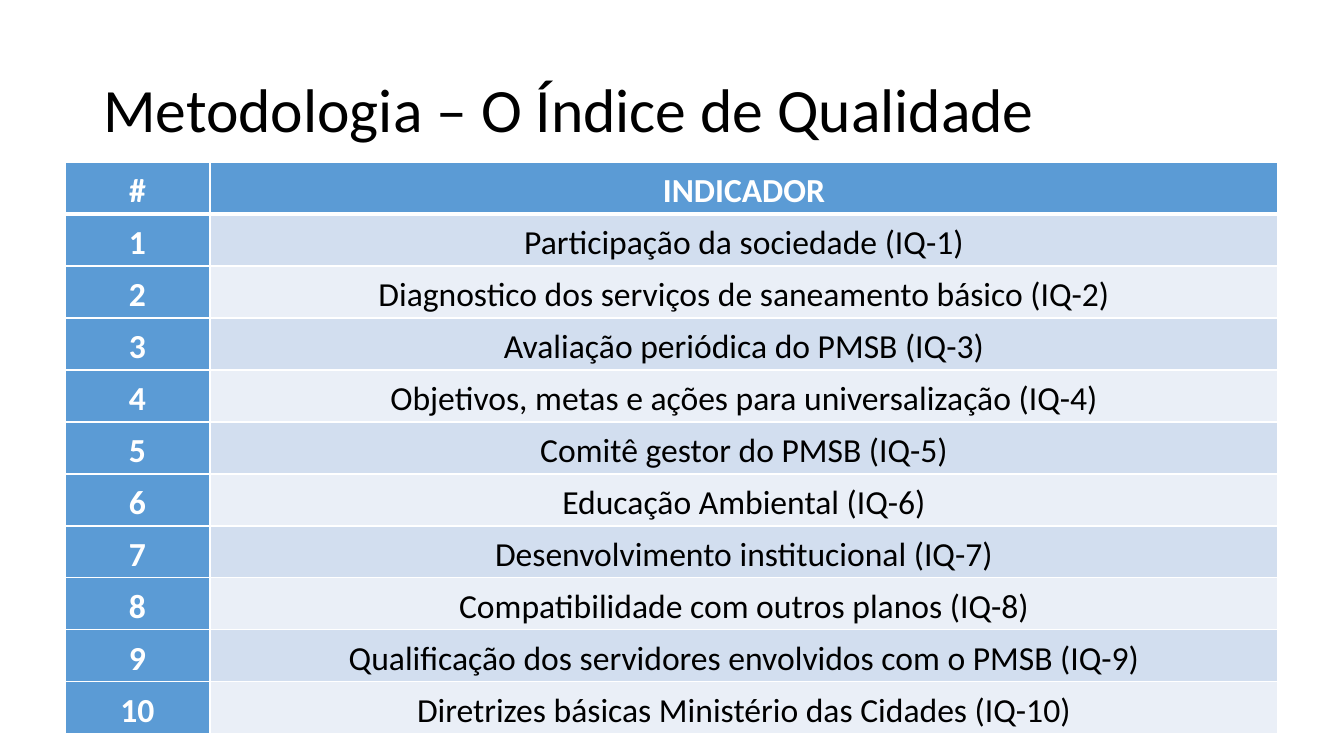
from lxml.etree import SubElement
from pptx import Presentation
from pptx.dml.color import RGBColor
from pptx.enum.text import MSO_ANCHOR as Anchor, MSO_AUTO_SIZE as AutoSize, PP_ALIGN as Align
from pptx.oxml.ns import qn
from pptx.util import Emu, Pt

TITLE = "Metodologia – O Índice de Qualidade"
HEADER = ("#", "INDICADOR")
INDICATORS = [
    "Participação da sociedade",
    "Diagnostico dos serviços de saneamento básico",
    "Avaliação periódica do PMSB",
    "Objetivos, metas e ações para universalização",
    "Comitê gestor do PMSB",
    "Educação Ambiental",
    "Desenvolvimento institucional",
    "Compatibilidade com outros planos",
    "Qualificação dos servidores envolvidos com o PMSB",
    "Diretrizes básicas Ministério das Cidades",
]

WHITE = RGBColor(0xFF, 0xFF, 0xFF)
BLACK = RGBColor(0x00, 0x00, 0x00)
BLUE = RGBColor(0x5B, 0x9B, 0xD5)
BANDS = (RGBColor(0xEA, 0xEF, 0xF7), RGBColor(0xD2, 0xDE, 0xEF))

FONT = "Calibri"
SLIDE_SIZE = (1344, 756)
TITLE_BOX = (93, 40, 1159, 146)
TABLE_LEFT, TABLE_TOP = 65, 162
COLUMN_WIDTHS = (145, 1068)
ROW_HEIGHT = 52
CELL_FORMAT = {"vertical_anchor": Anchor.MIDDLE}
CELL_MARGINS = {"margin_left": 5, "margin_right": 5, "margin_top": 0, "margin_bottom": 0}


def px(length):
    return Emu(round(length * 914400 / 100.8))


def set_values(target, values):
    for name, value in values.items():
        setattr(target, name, value)


def write(frame, text, size, color, bold, align, spacing):
    para = frame.paragraphs[0]
    set_values(para, {"alignment": align, "line_spacing": spacing})
    span = para.add_run()
    span.text = text
    set_values(span.font, {"name": FONT, "size": Pt(size), "bold": bold})
    span.font.color.rgb = color


def add_borders(cell, widths):
    """Draw white borders; widths maps a side (L, R, T, B) to points."""
    properties = cell._tc.get_or_add_tcPr()
    for side, width in widths.items():
        line = SubElement(properties, qn(f"a:ln{side}"), w=str(Pt(width)))
        fill = SubElement(line, qn("a:solidFill"))
        SubElement(fill, qn("a:srgbClr"), val=str(WHITE))


def add_title(slide):
    title = slide.shapes.title
    box = map(px, TITLE_BOX)
    set_values(title, dict(zip(("left", "top", "width", "height"), box)))
    frame = title.text_frame
    set_values(frame, {"vertical_anchor": Anchor.MIDDLE, "word_wrap": True,
                       "auto_size": AutoSize.NONE})
    write(frame, TITLE, 44, BLACK, False, Align.LEFT, 0.9)


def add_indicator_table(slide):
    rows = [HEADER] + [(str(number), f"{name} (IQ-{number})")
                       for number, name in enumerate(INDICATORS, 1)]
    table = slide.shapes.add_table(
        len(rows), len(HEADER), px(TABLE_LEFT), px(TABLE_TOP),
        px(sum(COLUMN_WIDTHS)), px(ROW_HEIGHT * len(rows))).table
    for column, width in zip(table.columns, COLUMN_WIDTHS):
        column.width = px(width)
    for r, texts in enumerate(rows):
        table.rows[r].height = px(ROW_HEIGHT)
        for c, text in enumerate(texts):
            cell = table.cell(r, c)
            is_heading = r == 0 or c == 0
            set_values(cell, CELL_FORMAT)
            set_values(cell, {name: px(size) for name, size in CELL_MARGINS.items()})
            add_borders(cell, {"L": 1, "R": 1, "T": 3 if r == 1 else 1,
                               "B": 3 if r == 0 else 1})
            cell.fill.solid()
            cell.fill.fore_color.rgb = BLUE if is_heading else BANDS[r % 2]
            write(cell.text_frame, text, 24, WHITE if is_heading else BLACK,
                  is_heading, Align.CENTER, 1.15)


def main():
    deck = Presentation()
    deck.slide_width, deck.slide_height = map(px, SLIDE_SIZE)
    slide = deck.slides.add_slide(deck.slide_layouts.get_by_name("Title Only"))
    add_title(slide)
    add_indicator_table(slide)
    deck.save("out.pptx")


if __name__ == "__main__":
    main()
